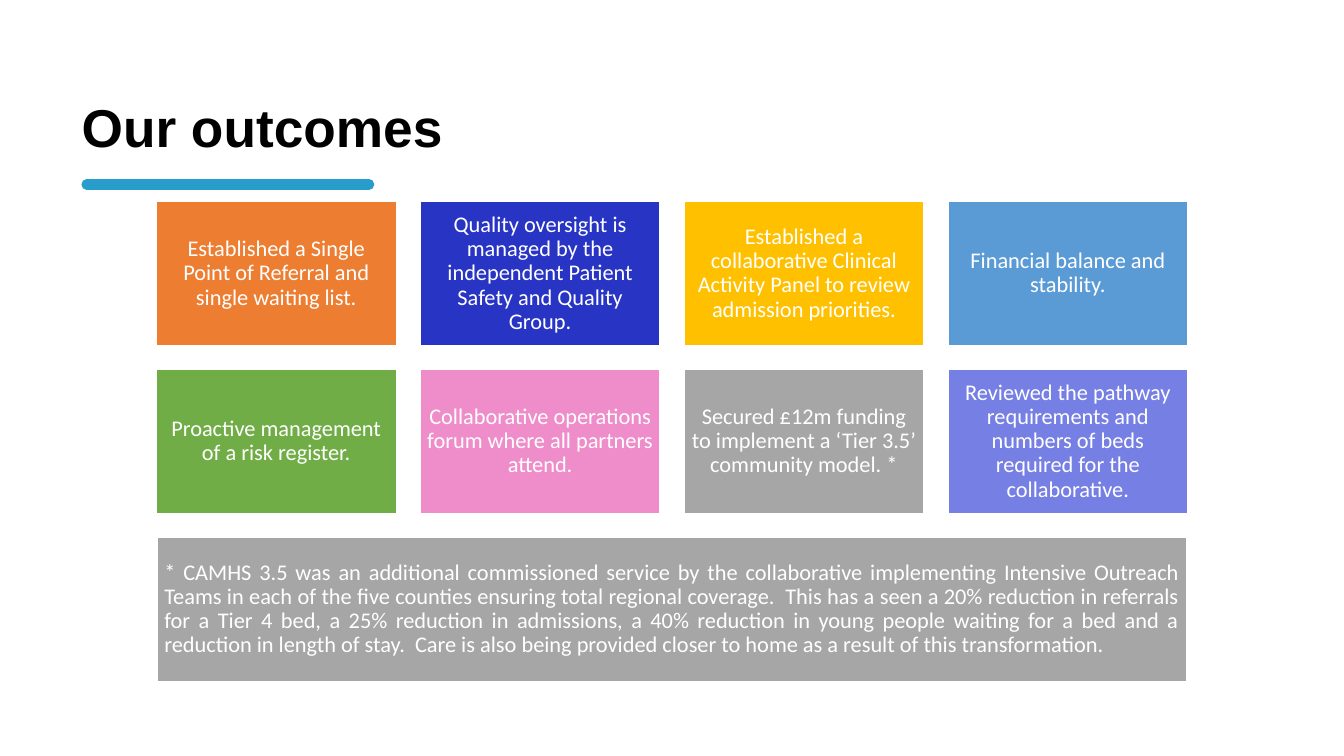
from dataclasses import dataclass

from lxml import etree
from pptx import Presentation
from pptx.dml.color import RGBColor
from pptx.enum import shapes, text
from pptx.oxml.ns import qn
from pptx.slide import Slide
from pptx.util import Inches, Pt

WHITE = "FFFFFF"
GREY = "A6A6A6"
COLUMNS = 4
GRID_LEFT, GRID_TOP = 1.55, 2.0
CARD_WIDTH, CARD_HEIGHT = 2.38, 1.43
COLUMN_STEP, ROW_STEP = 2.617, 1.665


@dataclass
class Card:
    wording: str
    fill: str


OUTCOMES = [
    Card("Established a Single Point of Referral and single waiting list.", "ED7D31"),
    Card("Quality oversight is managed by the independent Patient Safety and Quality Group.", "2834C4"),
    Card("Established a collaborative Clinical Activity Panel to review admission priorities.", "FFC000"),
    Card("Financial balance and stability.", "5B9BD5"),
    Card("Proactive management of a risk register.", "70AD47"),
    Card("Collaborative operations forum where all partners attend.", "EE8DCA"),
    Card("Secured £12m funding to implement a ‘Tier 3.5’ community model. *", GREY),
    Card("Reviewed the pathway requirements and numbers of beds required for the collaborative.", "767FE3"),
]
FOOTNOTE = Card(
    "* CAMHS 3.5 was an additional commissioned service by the collaborative implementing "
    "Intensive Outreach Teams in each of the five counties ensuring total regional coverage.  "
    "This has a seen a 20% reduction in referrals for a Tier 4 bed, a 25% reduction in "
    "admissions, a 40% reduction in young people waiting for a bed and a reduction in length "
    "of stay.  Care is also being provided closer to home as a result of this transformation.",
    GREY,
)


def colour(value: str) -> RGBColor:
    return RGBColor.from_string(value)


def add_title(slide: Slide, wording: str) -> None:
    title = slide.shapes.title
    title.left, title.top = Inches(0.71), Inches(0.57)
    title.width, title.height = Inches(9.55), Inches(1.45)
    frame = title.text_frame
    frame.text = wording
    frame.vertical_anchor = text.MSO_ANCHOR.MIDDLE
    paragraph = frame.paragraphs[0]
    paragraph.alignment = text.PP_ALIGN.LEFT
    paragraph.line_spacing = 0.9
    font = paragraph.font
    font.name, font.size, font.bold = "Arial", Pt(38), True
    font.color.rgb = colour("000000")


def add_title_rule(slide: Slide) -> None:
    rule = slide.shapes.add_connector(
        shapes.MSO_CONNECTOR.STRAIGHT, Inches(0.86), Inches(1.83), Inches(3.66), Inches(1.83))
    rule.line.color.rgb = colour("289DCB")
    rule.line.width = Pt(7.5)
    properties = rule._element.spPr
    properties.find(qn("a:ln")).set("cap", "rnd")
    etree.SubElement(properties, qn("a:effectLst"))


def add_card(slide: Slide, card: Card, left: float, top: float, width: float,
             alignment: text.PP_ALIGN = text.PP_ALIGN.CENTER) -> None:
    shape = slide.shapes.add_shape(
        shapes.MSO_SHAPE.RECTANGLE, Inches(left), Inches(top), Inches(width), Inches(CARD_HEIGHT))
    shape.shadow.inherit = False
    shape.fill.solid()
    shape.fill.fore_color.rgb = colour(card.fill)
    shape.line.color.rgb = colour(WHITE)
    shape.line.width = Pt(1)
    frame = shape.text_frame
    frame.word_wrap = True
    frame.vertical_anchor = text.MSO_ANCHOR.MIDDLE
    frame.margin_left = frame.margin_right = Inches(0.07)
    frame.margin_top = frame.margin_bottom = Inches(0.07)
    frame.text = card.wording
    paragraph = frame.paragraphs[0]
    paragraph.alignment = alignment
    paragraph.line_spacing = 0.9
    font = paragraph.font
    font.name, font.size = "Calibri", Pt(16)
    font.color.rgb = colour(WHITE)


def main() -> None:
    presentation = Presentation()
    presentation.slide_width, presentation.slide_height = Inches(13.33), Inches(7.5)
    slide = presentation.slides.add_slide(presentation.slide_layouts.get_by_name("Title Only"))

    # Heading
    add_title(slide, "Our outcomes")
    add_title_rule(slide)

    # Outcome grid
    for index, card in enumerate(OUTCOMES):
        row, column = divmod(index, COLUMNS)
        add_card(slide, card, GRID_LEFT + column * COLUMN_STEP,
                 GRID_TOP + row * ROW_STEP, CARD_WIDTH)

    # Footnote panel
    add_card(slide, FOOTNOTE, 1.56, GRID_TOP + 2 * ROW_STEP, 10.21, text.PP_ALIGN.JUSTIFY)

    presentation.save("out.pptx")


if __name__ == "__main__":
    main()
